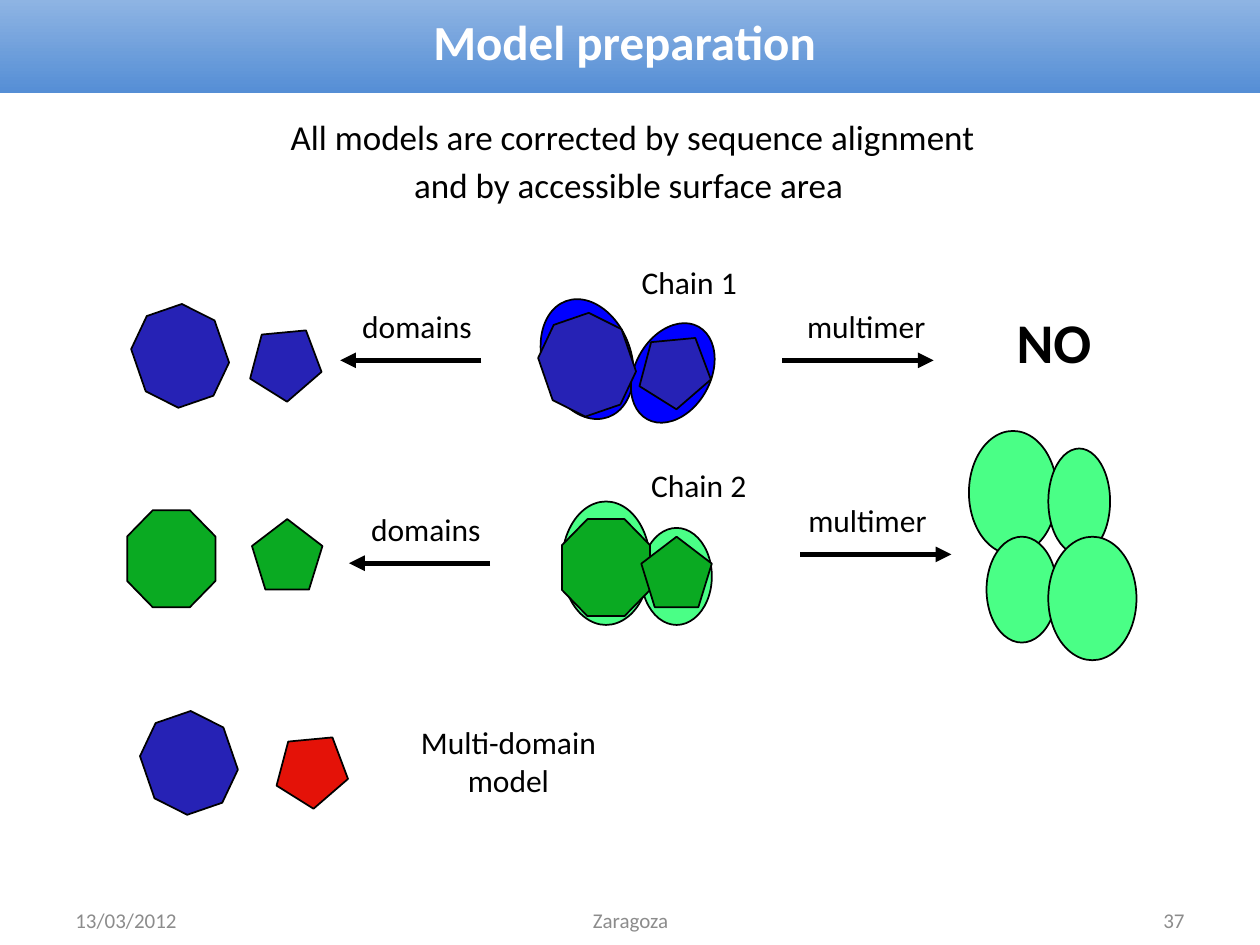
import dataclasses

import pptx
import pptx.dml.color
import pptx.enum.shapes
import pptx.enum.text
import pptx.oxml.ns
import pptx.util
from lxml import etree

SHAPE = pptx.enum.shapes.MSO_SHAPE
ALIGN = pptx.enum.text.PP_ALIGN
ANCHOR = pptx.enum.text.MSO_ANCHOR
COLUMNS, ROWS = 100, 75
OCTAGON = [(0.29, 0), (0, 0.27), (0, 0.73), (0.29, 1),
           (0.71, 1), (1, 0.73), (1, 0.27), (0.71, 0)]


@dataclasses.dataclass(frozen=True)
class Theme:
    """Colours, type sizes and line widths of the slide."""
    font: str = "Calibri"
    black: str = "000000"
    white: str = "FFFFFF"
    grey: str = "8C8C8C"
    band_dark: str = "558ED5"
    band_light: str = "8EB4E3"
    chain_blue: str = "0000FF"
    domain_blue: str = "2622B5"
    chain_green: str = "4AFF86"
    domain_green: str = "0AAA22"
    red: str = "E41208"
    title: int = 28
    verdict: int = 32
    body: int = 20
    label: int = 18
    footer: int = 12
    outline: int = 1
    arrow: int = 3


THEME = Theme()


def grid(n):
    """Return the length of n grid cells, a hundred of which span the slide."""
    return pptx.util.Inches(n * 10 / COLUMNS)


def rgb(value):
    """Return a colour object for a hex value."""
    return pptx.dml.color.RGBColor.from_string(value)


def set_text(sp, text, size, color=THEME.black, align=ALIGN.CENTER,
             bold=False, space=0, insets=(0.4, 0, 0.4, 0)):
    """Fill a shape's text frame and format every run alike."""
    tf = sp.text_frame
    tf.text = text
    (tf.margin_left, tf.margin_top,
     tf.margin_right, tf.margin_bottom) = map(grid, insets)
    for p in tf.paragraphs:
        p.alignment = align
        p.space_before = pptx.util.Pt(space)
        for r in p.runs:
            r.font.name = THEME.font
            r.font.size = pptx.util.Pt(size)
            r.font.bold = bold
            r.font.color.rgb = rgb(color)
    return tf


def add_text(s, box, text, size=THEME.label, wrap=False, **style):
    """Add a text box at a grid box."""
    sp = s.shapes.add_textbox(*map(grid, box))
    tf = set_text(sp, text, size, **style)
    tf.word_wrap = wrap
    return tf


def paint(sp, color, angle):
    """Give a shape its fill, black outline and rotation."""
    sp.shadow.inherit = False
    sp.fill.solid()
    sp.fill.fore_color.rgb = rgb(color)
    sp.line.color.rgb = rgb(THEME.black)
    sp.line.width = pptx.util.Pt(THEME.outline)
    sp.rotation = angle


def add_preset(s, kind, box, color, angle=0):
    """Add a painted preset shape."""
    paint(s.shapes.add_shape(kind, *map(grid, box)), color, angle)


def add_octagon(s, box, color, angle):
    """Add a painted octagon that fills its box."""
    x, y, w, h = box
    points = [(grid(x + w * a), grid(y + h * b)) for a, b in OCTAGON]
    builder = s.shapes.build_freeform(*points[0])
    builder.add_line_segments(points[1:], close=True)
    paint(builder.convert_to_shape(), color, angle)


def add_domains(s, x, y, offset, colors, angles=(0, 0)):
    """Place an octagon domain and a pentagon domain beside it."""
    dx, dy = offset
    add_octagon(s, (x, y, 7, 7.7), colors[0], angles[0])
    add_preset(s, SHAPE.REGULAR_PENTAGON, (x + dx, y + dy, 5.6, 5.6),
               colors[1], angles[1])


def add_arrow(s, start, end, y, text, label_box):
    """Draw a horizontal arrow with its label above."""
    c = s.shapes.add_connector(pptx.enum.shapes.MSO_CONNECTOR.STRAIGHT,
                               *map(grid, (start, y, end, y)))
    c.line.color.rgb = rgb(THEME.black)
    c.line.width = pptx.util.Pt(THEME.arrow)
    qn = pptx.oxml.ns.qn
    etree.SubElement(c.line._get_or_add_ln(), qn("a:tailEnd"), type="triangle")
    etree.SubElement(c._element.spPr, qn("a:effectLst"))
    x, width = label_box
    add_text(s, (x, y - 4.2, width, 4), text)


def add_title(s, box):
    """Format the title placeholder as a gradient band."""
    sp = s.shapes.title
    sp.left, sp.top, sp.width, sp.height = map(grid, box)
    sp.fill.gradient()
    sp.fill.gradient_angle = 90
    for stop, color in zip(sp.fill.gradient_stops,
                           (THEME.band_dark, THEME.band_light)):
        stop.color.rgb = rgb(color)
    tf = set_text(sp, "Model preparation ", THEME.title, THEME.white,
                  bold=True, insets=(1, 0.9, 1, 1.7))
    tf.vertical_anchor = ANCHOR.TOP
    tf.auto_size = pptx.enum.text.MSO_AUTO_SIZE.NONE


def add_first_chain(s, x, y):
    """Place the blue chain, its domains and its multimer verdict."""
    blues = (THEME.domain_blue,) * 2
    tilt = (341, 32)
    add_text(s, (x + 38.8, y, 10.2, 4), "Chain 1")
    add_domains(s, x, y + 3.5, (9.2, 1.4), blues, tilt)
    for box, angle in (((x + 32.3, y + 2.7, 7, 9.8), 340),
                       ((x + 39.6, y + 4.5, 6, 8.4), 29)):
        add_preset(s, SHAPE.OVAL, box, THEME.chain_blue, angle)
    add_domains(s, x + 32.3, y + 4.2, (7.8, 1.3), blues, tilt)
    add_arrow(s, x + 27.4, x + 16.2, y + 7.7, "domains", (x + 16.8, 11))
    add_arrow(s, x + 51.3, x + 63.3, y + 7.7, "multimer", (x + 52.1, 11.7))
    add_text(s, (x + 69.3, y + 3.5, 7.1, 5.2), "NO", THEME.verdict, bold=True)


def add_second_chain(s, x, y):
    """Place the green chain, its domains and its multimer."""
    greens = (THEME.domain_green,) * 2
    add_text(s, (x + 40.1, y + 2.8, 10.5, 4), "Chain 2")
    add_domains(s, x, y + 6.3, (9.9, 0.7), greens)
    for dx, dy, w, h in ((66.8, 0, 7, 9.8), (73.1, 1.4, 4.9, 8.4),
                         (68.2, 8.4, 5.6, 8.4), (73.1, 8.4, 7, 9.8),
                         (40.8, 7.7, 5.6, 7.7), (34.5, 5.6, 7, 9.8)):
        add_preset(s, SHAPE.OVAL, (x + dx, y + dy, w, h), THEME.chain_green)
    add_domains(s, x + 34.5, y + 7, (6.3, 1.4), greens)
    add_arrow(s, x + 28.8, x + 17.6, y + 10.5, "domains", (x + 18.2, 11))
    add_arrow(s, x + 53.4, x + 65.4, y + 9.8, "multimer", (x + 52.9, 11.7))


def add_multi_domain(s, x, y):
    """Place the combined model and its caption."""
    add_domains(s, x, y, (10.6, 1.4), (THEME.domain_blue, THEME.red), (341, 32))
    add_text(s, (x + 19.7, y + 0.7, 18.3, 7.2), "Multi-domain model", wrap=True)


def add_footer(s, y, height):
    """Place date, venue and slide number along the bottom."""
    for x, width, text, align in ((5, 23.3, "13/03/2012", ALIGN.LEFT),
                                  (34.2, 31.7, "Zaragoza", ALIGN.CENTER),
                                  (71.7, 23.3, "37", ALIGN.RIGHT)):
        tf = add_text(s, (x, y, width, height), text, THEME.footer, wrap=True,
                      color=THEME.grey, align=align, insets=(1, 0.5, 1, 0.5))
        tf.vertical_anchor = ANCHOR.MIDDLE


def main():
    """Build the slide and save it."""
    prs = pptx.Presentation()
    prs.slide_width, prs.slide_height = grid(COLUMNS), grid(ROWS)
    s = prs.slides.add_slide(prs.slide_layouts[5])
    add_title(s, (0, 0, COLUMNS, 7.4))
    add_text(s, (5, 8.7, 90, 8.2),
             "All models are corrected by sequence alignment\n"
             "and by accessible surface area ",
             THEME.body, wrap=True, space=3.2, insets=(1.4, 0.5, 1, 0.5))
    add_first_chain(s, 10.8, 20.9)
    add_second_chain(s, 10.1, 34.2)
    add_multi_domain(s, 11.5, 56.7)
    add_footer(s, 71, 4)
    prs.save("out.pptx")


if __name__ == "__main__":
    main()
